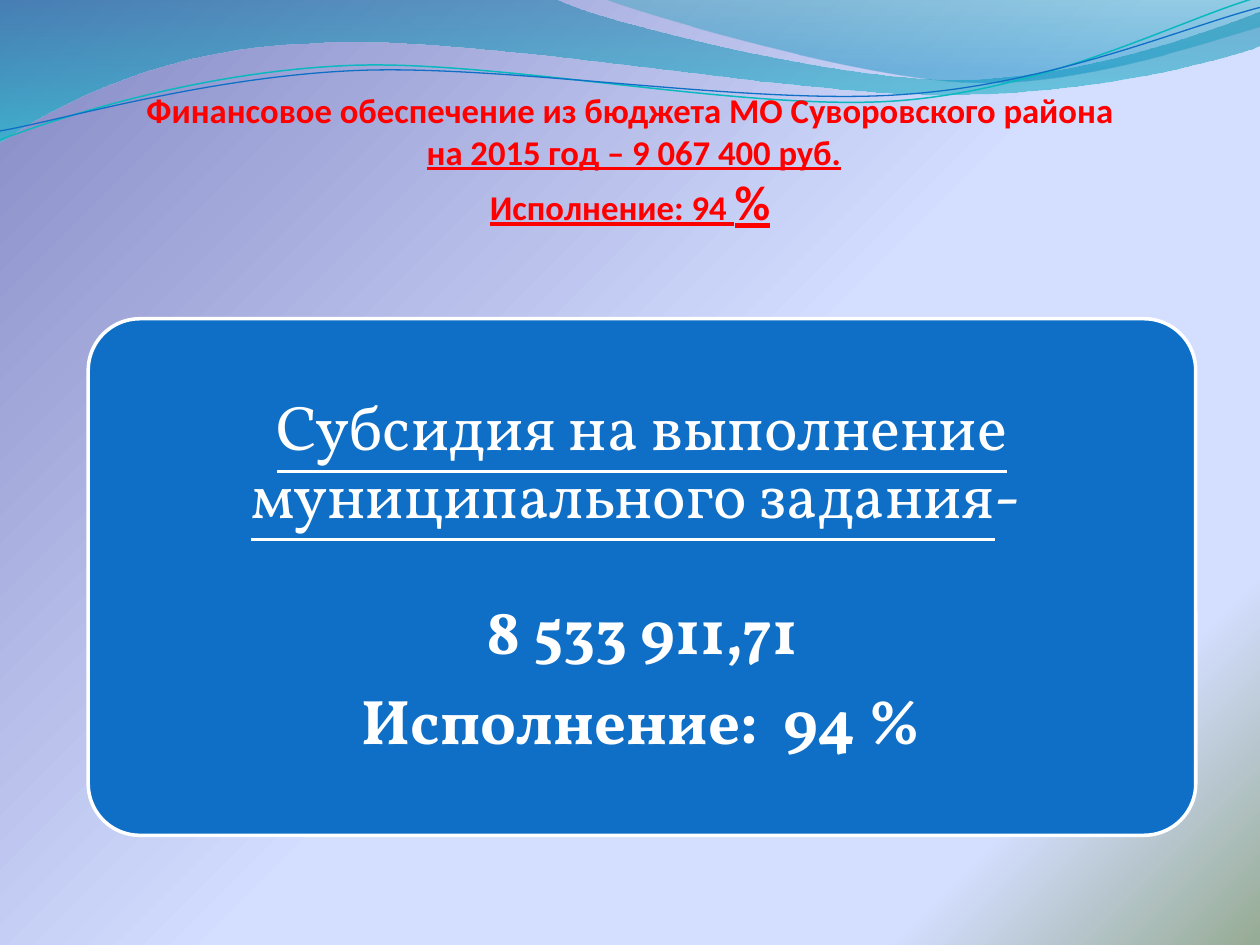
from dataclasses import dataclass
from math import cos, radians, sin

from lxml.etree import SubElement
from pptx import Presentation
from pptx.dml.color import RGBColor as Rgb
from pptx.enum.shapes import MSO_SHAPE as Preset
from pptx.enum.text import MSO_ANCHOR as Anchor, PP_ALIGN as Align
from pptx.oxml.ns import qn
from pptx.util import Inches, Pt

COLUMNS, ROWS = 10, 7.5
CELL = Inches(1)
STRAND_TILT = 357.3


@dataclass(frozen=True)
class Theme:
    heading_font: str = "Calibri"
    card_font: str = "Vollkorn"
    heading_size: float = 19.8
    percent_size: float = 27.9
    card_size: float = 36
    heading: str = "FF0000"
    white: str = "FFFFFF"
    blue: str = "0F6FC6"
    teal: str = "0AB8BF"
    backdrop: tuple = ((0, "8488C4", 100), (53, "D4DEFF", 100),
                       (83, "D4DEFF", 100), (100, "96AB94", 100))
    wide_wave: tuple = ((0, "0074A1", 45), (100, "00C6CF", 55))
    corner_wave: tuple = ((0, "00A1A9", 30), (80, "008BBF", 45))


THEME = Theme()

WIDE_WAVE = [
    ((0, 0),),
    ((4.4, -0.01),),
    ((4.76, 0.17), (6.64, 0.63), (7.58, 0.63)),
    ((8.53, 0.63), (9.58, 0.26), (10, 0.09)),
    ((10.01, 0.36),),
    ((9.83, 0.44), (8.7, 0.76), (7.46, 0.75)),
    ((6.22, 0.75), (3.82, 0.28), (2.57, 0.34)),
    ((1.29, 0.36), (0.46, 0.83), (-0.01, 1.13)),
]
CORNER_WAVE = [
    ((4.79, -0.01),),
    ((5.09, 0.11), (6.82, 0.62), (7.69, 0.65)),
    ((8.56, 0.69), (9.61, 0.32), (10, 0.21)),
    ((10, 0),),
]
TEAL_STRAND = [
    ((0, 1.11),),
    ((0.48, 0.93), (1.58, 0.57), (2.77, 0.52)),
    ((3.95, 0.47), (5.93, 0.89), (7.13, 0.8)),
    ((8.33, 0.71), (9.38, 0.15), (9.98, -0.02)),
]
BLUE_STRAND = [
    ((0, 1.04),),
    ((0.47, 0.96), (1.64, 0.61), (2.83, 0.56)),
    ((4.03, 0.51), (5.97, 0.84), (7.17, 0.75)),
    ((8.36, 0.67), (9.41, 0.21), (10, 0.06)),
]


def cells(*lengths):
    return [round(length * CELL) for length in lengths]


def paint_gradient(fill, element, stops, angle):
    fill.gradient()
    gradient = element.find(".//" + qn("a:gradFill"))
    for part in list(gradient):
        gradient.remove(part)
    stop_list = SubElement(gradient, qn("a:gsLst"))
    for position, color, opacity in stops:
        stop = SubElement(stop_list, qn("a:gs"), pos=str(position * 1000))
        tint = SubElement(stop, qn("a:srgbClr"), val=color)
        SubElement(tint, qn("a:alpha"), val=str(opacity * 1000))
    SubElement(gradient, qn("a:lin"), ang=str(angle * 60000), scaled="0")


def trace(slide, segments, close):
    first, *rest = [cells(*point) for segment in segments for point in segment]
    builder = slide.shapes.build_freeform(*first)
    builder.add_line_segments(rest, close=close)
    curve = builder.convert_to_shape()
    curve.shadow.inherit = False
    steps = iter(curve._element.findall(".//" + qn("a:lnTo")))
    for segment in segments[1:]:
        bend, *others = [next(steps) for _ in segment]
        if others:
            bend.tag = qn("a:cubicBezTo")
        for step in others:
            bend.append(step[0])
            step.getparent().remove(step)
    return curve


def level(segments, tilt):
    (left, top), (right, bottom) = segments[0][0], segments[-1][-1]
    middle_x, middle_y = (left + right) / 2, (top + bottom) / 2
    c, s = cos(radians(-tilt)), sin(radians(-tilt))

    def turn(x, y):
        dx, dy = x - middle_x, y - middle_y
        return middle_x + dx * c - dy * s, middle_y + dx * s + dy * c

    return [tuple(turn(*point) for point in segment) for segment in segments]


def add_wave(slide, segments, stops):
    wave = trace(slide, segments, close=True)
    paint_gradient(wave.fill, wave._element, stops, 90)
    wave.line.fill.background()


def add_strand(slide, segments, color, width):
    strand = trace(slide, level(segments, STRAND_TILT), close=False)
    strand.rotation = STRAND_TILT
    strand.fill.background()
    strand.line.color.rgb = Rgb.from_string(color)
    strand.line.width = Pt(width)


def set_font(font, name, size, color, bold=False):
    font.name, font.size, font.bold = name, Pt(size), bold
    font.color.rgb = Rgb.from_string(color)


def set_frame(frame, anchor, insets):
    frame.word_wrap = True
    frame.vertical_anchor = anchor
    (frame.margin_left, frame.margin_top,
     frame.margin_right, frame.margin_bottom) = cells(*insets)


def add_run(paragraph, text, underline=False):
    run = paragraph.add_run()
    run.text = text
    run.font.underline = underline
    return run


def add_heading(slide):
    heading = slide.shapes.add_textbox(*cells(0.5, 0.3, COLUMNS - 1, 2.28))
    set_frame(heading.text_frame, Anchor.BOTTOM, (0, 0.05, 0, 0.75))
    title = heading.text_frame.paragraphs[0]
    title.alignment = Align.CENTER
    set_font(title.font, THEME.heading_font, THEME.heading_size, THEME.heading, bold=True)
    add_run(title, "Финансовое обеспечение из бюджета МО Суворовского района")
    title.add_line_break()
    add_run(title, " ")
    add_run(title, "на 2015 год – 9 067 400 руб.", underline=True)
    title.add_line_break()
    add_run(title, "Исполнение: 94 ", underline=True)
    percent = add_run(title, "%", underline=True)
    percent.font.size = Pt(THEME.percent_size)


def add_subsidy_card(slide):
    card = slide.shapes.add_shape(Preset.ROUNDED_RECTANGLE, *cells(0.7, 2.53, 8.79, 4.1))
    card.adjustments[0] = 0.1
    card.shadow.inherit = False
    card.fill.solid()
    card.fill.fore_color.rgb = Rgb.from_string(THEME.blue)
    card.line.color.rgb = Rgb.from_string(THEME.white)
    card.line.width = Pt(2)
    frame = card.text_frame
    set_frame(frame, Anchor.MIDDLE, (0.15,) * 4)
    purpose, amount, execution = (
        frame.paragraphs[0], frame.add_paragraph(), frame.add_paragraph())
    for line in (purpose, amount, execution):
        set_font(line.font, THEME.card_font, THEME.card_size, THEME.white,
                 bold=line is not purpose)
        line.alignment = Align.CENTER
        line.line_spacing = 0.9
    add_run(purpose, "Субсидия на выполнение муниципального задания", underline=True)
    add_run(purpose, "- ")
    add_run(amount, "8 533 911,71")
    add_run(execution, "Исполнение:  94 %")
    purpose.space_after = Pt(39)
    amount.space_after = Pt(0.35 * THEME.card_size)


def main():
    deck = Presentation()
    deck.slide_width, deck.slide_height = cells(COLUMNS, ROWS)
    slide = deck.slides.add_slide(deck.slide_layouts[6])
    paint_gradient(slide.background.fill, slide._element, THEME.backdrop, 45)
    add_wave(slide, WIDE_WAVE, THEME.wide_wave)
    add_wave(slide, CORNER_WAVE, THEME.corner_wave)
    add_strand(slide, TEAL_STRAND, THEME.teal, 0.85)
    add_strand(slide, BLUE_STRAND, THEME.blue, 0.75)
    add_heading(slide)
    add_subsidy_card(slide)
    deck.save("out.pptx")


if __name__ == "__main__":
    main()
